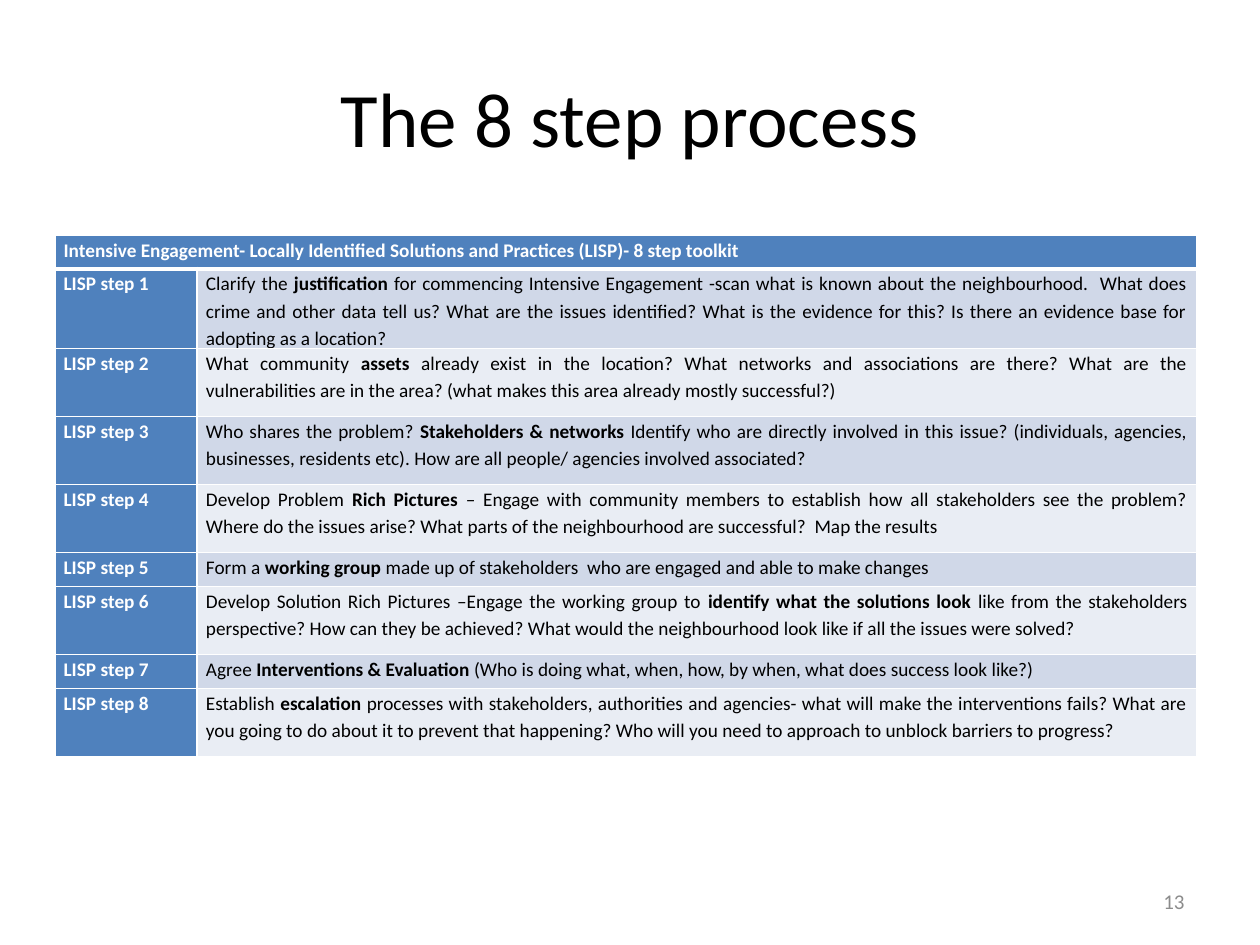
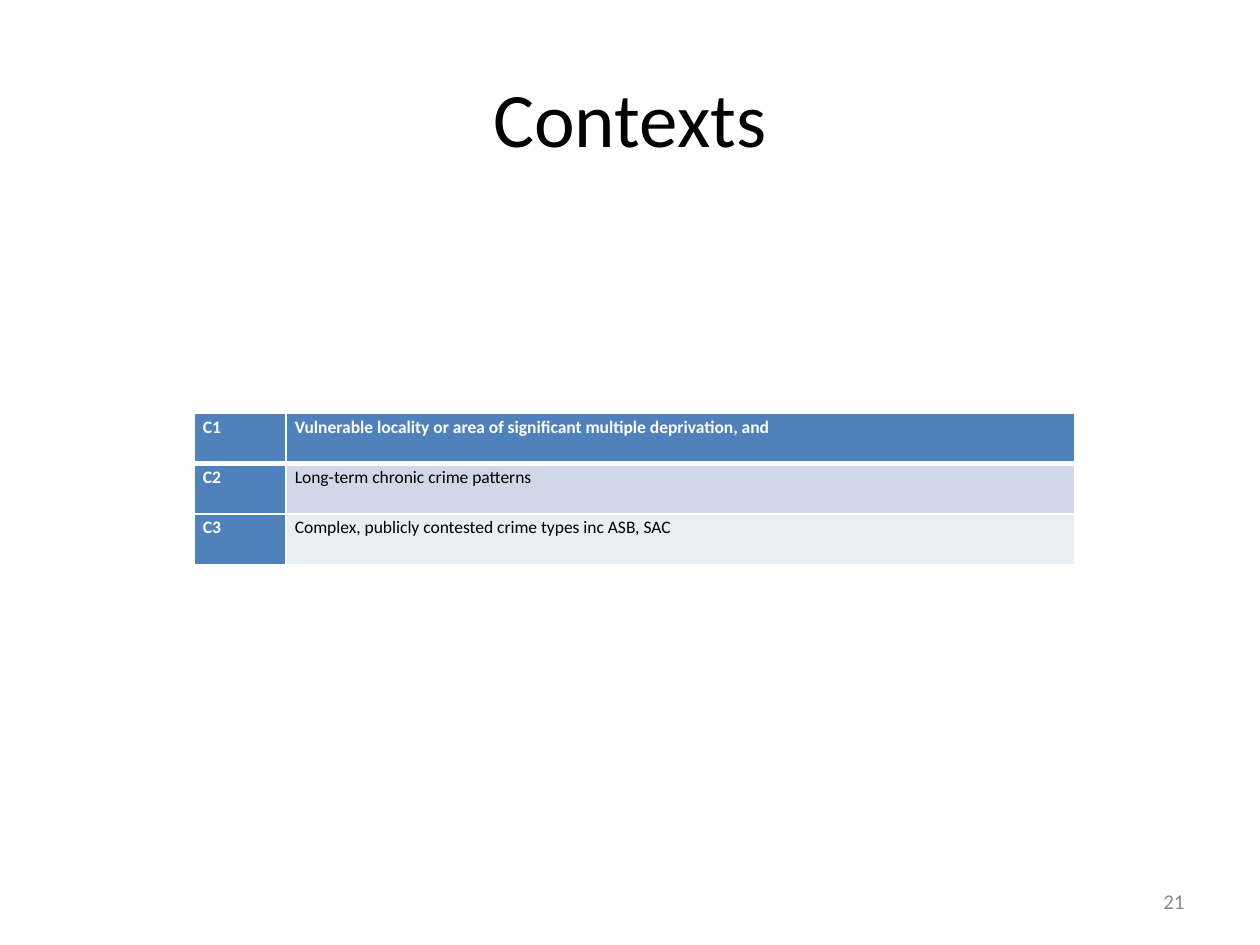
from dataclasses import dataclass

from lxml import etree
from pptx import Presentation
from pptx.dml.color import RGBColor
from pptx.enum.text import MSO_ANCHOR, PP_ALIGN
from pptx.oxml.ns import qn
from pptx.util import Inches, Length, Pt

CENTER, RIGHT, JUSTIFY = PP_ALIGN.CENTER, PP_ALIGN.RIGHT, PP_ALIGN.JUSTIFY
MIDDLE = MSO_ANCHOR.MIDDLE

SLIDE_WIDTH = Inches(10)
SLIDE_HEIGHT = Inches(7.5)
GRID_COLUMNS = 100
GRID_ROWS = 75
TITLE_ONLY = 5

FONT = "Calibri"
BLACK, WHITE, GRAY = "000000", "FFFFFF", "8C8C8C"
BLUE = "4F81BD"
BANDS = ("D0D8E8", "E9EDF4")
CELL_MARGIN = 0.7
THIN, THICK = 1, 3
BOLD_MARK = "**"


@dataclass(frozen=True)
class Box:
    left: float
    top: float
    width: float
    height: float


@dataclass(frozen=True)
class TableRow:
    label: str
    text: str
    height: float


@dataclass(frozen=True)
class TableSlide:
    title: str
    number: str
    left: float
    top: float
    columns: tuple[float, float]
    rows: list[TableRow]
    font_size: float
    space_after: float


TITLE_BOX = Box(5, 3, 90, 12.5)
NUMBER_BOX = Box(71.67, 69.5, 23.33, 4)

ONE_LINE = 2.7
TWO_LINES = 2 * ONE_LINE
CONTEXT_HEIGHT = 4

STEPS = [
    ("Clarify the** justification **for commencing Intensive Engagement -scan what is known about "
     "the neighbourhood.  What does crime and other data tell us? What are the issues identified? "
     "What is the evidence for this? Is there an evidence base for adopting as a location?", TWO_LINES),
    ("What community **assets** already exist in the location? What networks and associations are "
     "there? What are the vulnerabilities are in the area? (what makes this area already mostly "
     "successful?)", TWO_LINES),
    ("Who shares the problem? **Stakeholders & networks **Identify who are directly involved in "
     "this issue? (individuals, agencies, businesses, residents etc). How are all people/ agencies "
     "involved associated?", TWO_LINES),
    ("Develop Problem **Rich Pictures **– Engage with community members to establish how all "
     "stakeholders see the problem? Where do the issues arise? What parts of the neighbourhood are "
     "successful?  Map the results", TWO_LINES),
    ("Form a **working group **made up of stakeholders  who are engaged and able to make changes",
     ONE_LINE),
    ("Develop Solution Rich Pictures –Engage the working group to **identify what the solutions "
     "look **like from the stakeholders perspective? How can they be achieved? What would the "
     "neighbourhood look like if all the issues were solved?", TWO_LINES),
    ("Agree **Interventions & Evaluation **(Who is doing what, when, how, by when, what does "
     "success look like?)", ONE_LINE),
    ("Establish **escalation** processes with stakeholders, authorities and agencies- what will "
     "make the interventions fails? What are you going to do about it to prevent that happening? "
     "Who will you need to approach to unblock barriers to progress?", TWO_LINES),
]
TOOLKIT = "Intensive Engagement- Locally Identified Solutions and Practices (LISP)- 8 step toolkit"
CONTEXTS = [
    "Vulnerable locality or area of significant multiple deprivation, and",
    "Long-term chronic crime patterns",
    "Complex, publicly contested crime types inc ASB, SAC",
]

SLIDES = [
    TableSlide(
        "The 8 step process", "13", 4.35, 18.65, (11.3, 79.3),
        [TableRow(TOOLKIT, "", ONE_LINE)]
        + [TableRow(f"LISP step {index}", text, height)
           for index, (text, height) in enumerate(STEPS, 1)],
        11, 0,
    ),
    TableSlide(
        "Contexts", "21", 15.4, 32.8, (7.3, 62.6),
        [TableRow(f"C{index}", text, CONTEXT_HEIGHT) for index, text in enumerate(CONTEXTS, 1)],
        10, 10,
    ),
]


def color(value: str) -> RGBColor:
    return RGBColor.from_string(value)


def across(columns: float) -> Length:
    return Length(round(SLIDE_WIDTH * columns / GRID_COLUMNS))


def down(rows: float) -> Length:
    return Length(round(SLIDE_HEIGHT * rows / GRID_ROWS))


def place(box: Box) -> tuple[Length, Length, Length, Length]:
    return across(box.left), down(box.top), across(box.width), down(box.height)


def format_paragraph(paragraph, size: float, font_color: str, alignment) -> None:
    paragraph.alignment = alignment
    paragraph.font.name = FONT
    paragraph.font.size = Pt(size)
    paragraph.font.color.rgb = color(font_color)


def write_line(shape, text: str, size: float, font_color: str, alignment) -> None:
    frame = shape.text_frame
    frame.word_wrap = True
    frame.vertical_anchor = MIDDLE
    frame.text = text
    format_paragraph(frame.paragraphs[0], size, font_color, alignment)


def add_borders(cell, top: float, bottom: float) -> None:
    properties = cell._tc.get_or_add_tcPr()
    for side, width in (("L", THIN), ("R", THIN), ("T", top), ("B", bottom)):
        line = etree.SubElement(properties, qn(f"a:ln{side}"), w=str(Pt(width)))
        fill = etree.SubElement(line, qn("a:solidFill"))
        etree.SubElement(fill, qn("a:srgbClr"), val=WHITE)


def write_cell(cell, text: str, strong: bool, content: TableSlide) -> None:
    cell.margin_left = cell.margin_right = across(CELL_MARGIN)
    cell.margin_top = cell.margin_bottom = 0
    paragraph = cell.text_frame.paragraphs[0]
    format_paragraph(paragraph, content.font_size, WHITE if strong else BLACK, JUSTIFY)
    paragraph.line_spacing = 1.15
    paragraph.space_before = Pt(10)
    paragraph.space_after = Pt(content.space_after)
    for index, part in enumerate(text.split(BOLD_MARK)):
        if part:
            run = paragraph.add_run()
            run.text = part
            run.font.name = FONT
            run.font.size = Pt(content.font_size)
            run.font.color.rgb = color(WHITE if strong else BLACK)
            run.font.bold = strong or index % 2 == 1


def add_banded_table(slide, content: TableSlide) -> None:
    box = Box(content.left, content.top, sum(content.columns),
              sum(row.height for row in content.rows))
    table = slide.shapes.add_table(len(content.rows), len(content.columns), *place(box)).table
    table.first_col = True
    for column, width in zip(table.columns, content.columns):
        column.width = across(width)
    for row_index, row in enumerate(content.rows):
        table.rows[row_index].height = down(row.height)
        for column_index, text in enumerate((row.label, row.text)):
            cell = table.cell(row_index, column_index)
            strong = row_index == 0 or column_index == 0
            add_borders(cell, THICK if row_index == 1 else THIN, THICK if row_index == 0 else THIN)
            cell.fill.solid()
            cell.fill.fore_color.rgb = color(BLUE if strong else BANDS[(row_index - 1) % 2])
            write_cell(cell, text, strong, content)
        if not row.text:
            table.cell(row_index, 0).merge(table.cell(row_index, 1))


def add_table_slide(presentation, content: TableSlide) -> None:
    slide = presentation.slides.add_slide(presentation.slide_layouts[TITLE_ONLY])
    title = slide.shapes.title
    title.left, title.top, title.width, title.height = place(TITLE_BOX)
    write_line(title, content.title, 44, BLACK, CENTER)
    number = slide.shapes.add_textbox(*place(NUMBER_BOX))
    write_line(number, content.number, 12, GRAY, RIGHT)
    add_banded_table(slide, content)


def main() -> None:
    presentation = Presentation()
    presentation.slide_width = SLIDE_WIDTH
    presentation.slide_height = SLIDE_HEIGHT
    for content in SLIDES:
        add_table_slide(presentation, content)
    presentation.save("out.pptx")


if __name__ == "__main__":
    main()
